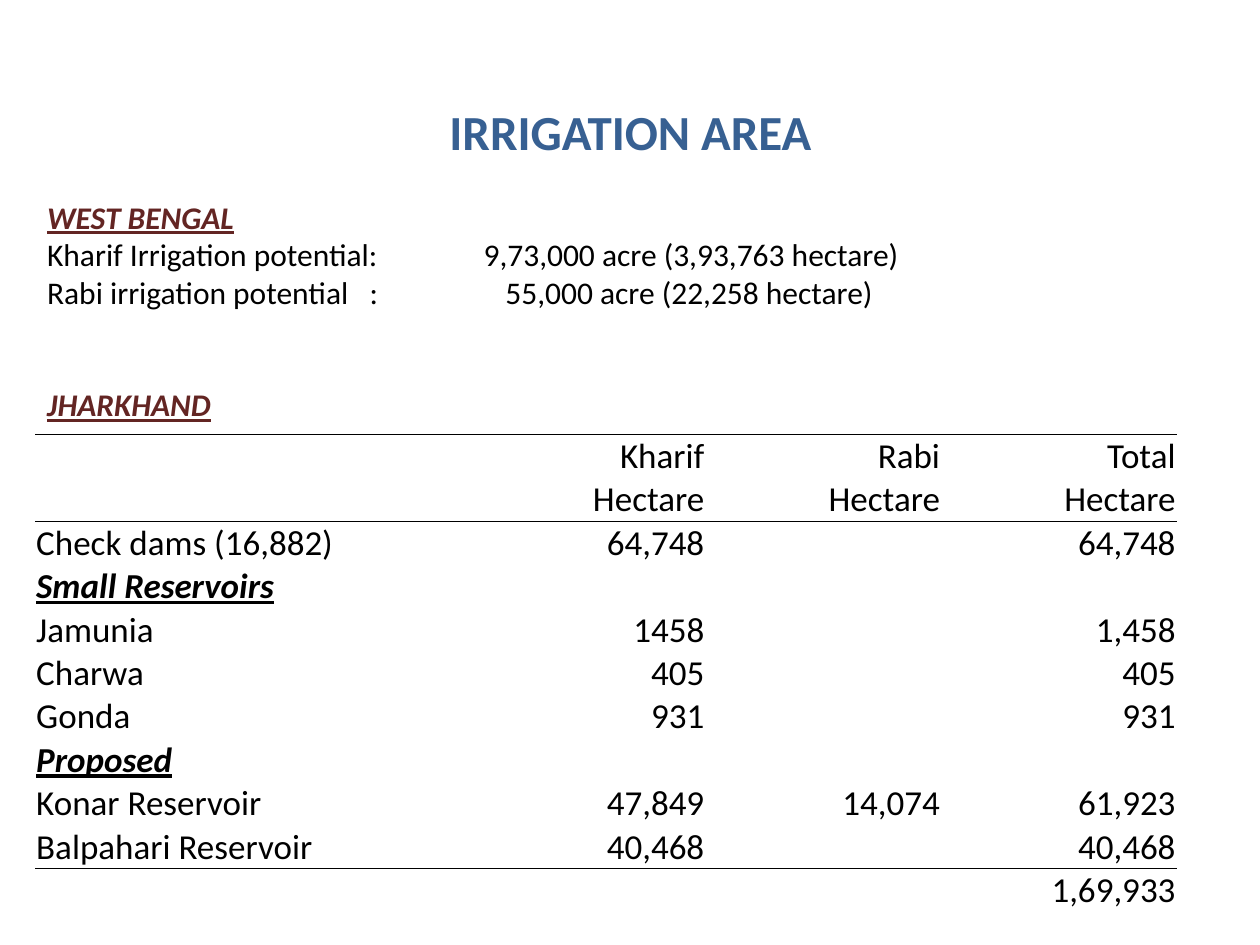
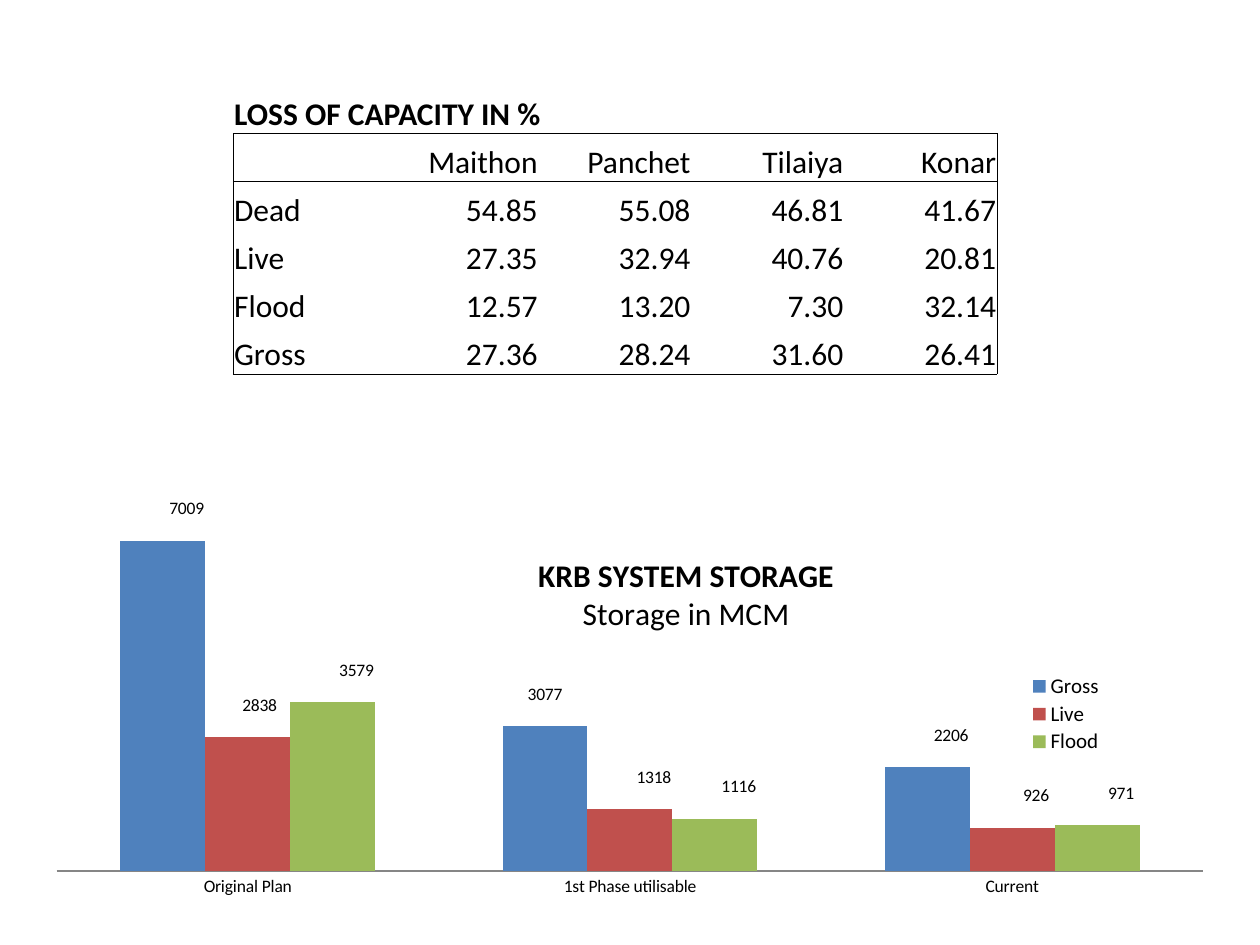
"""Build two slides on irrigation area and reservoir capacity."""
from lxml.etree import SubElement
from pptx import Presentation as Deck
from pptx.chart.data import CategoryChartData as Data
from pptx.dml.color import RGBColor as Rgb
from pptx.enum.chart import XL_CHART_TYPE as Kind, XL_LEGEND_POSITION as Side
from pptx.enum.chart import XL_LABEL_POSITION as Spot, XL_TICK_LABEL_POSITION as Tick
from pptx.enum.chart import XL_TICK_MARK as Mark
from pptx.enum.text import MSO_ANCHOR as Anchor, MSO_AUTO_SIZE as Fit, PP_ALIGN as Align
from pptx.oxml import parse_xml
from pptx.oxml.ns import qn
from pptx.util import Cm, Pt

INK, BLUE, WINE, GREY = "000000", "376092", "632523", "868686"
BASE = {"name": "Calibri", "bold": False, "italic": False, "underline": False}
HEAD = {"bold": True, "italic": True, "underline": True}
PLAIN = "{2D5ABB26-0587-4C30-8999-92F81FD0307C}"
CNS = "http://schemas.openxmlformats.org/drawingml/2006/chart"

TITLE = "IRRIGATION AREA"
NOTES = [
    {"text": "WEST BENGAL", "head": True},
    {"text": "Kharif Irrigation potential:\t9,73,000 acre (3,93,763 hectare)", "tabs": [8.8]},
    {"text": "Rabi irrigation potential\t:\t55,000 acre (22,258 hectare)", "tabs": [6.5, 9.24]},
    {"text": "JHARKHAND", "head": True, "gap": 42.5},
]
AREA = {
    "box": (0.71, 8.76), "cols": [8.76, 4.75, 4.75, 4.75], "high": 0.87, "size": 20,
    "rules": {-1, 1, 9}, "frame": False,
    "heads": {"Small Reservoirs": HEAD, "Proposed": HEAD},
    "rows": [
        ("", "Kharif", "Rabi", "Total"),
        ("", "Hectare", "Hectare", "Hectare"),
        ("Check dams (16,882)", "64,748", "", "64,748"),
        ("Small Reservoirs", "", "", ""),
        ("Jamunia", "1458", "", "1,458"),
        ("Charwa", "405", "", "405"),
        ("Gonda", "931", "", "931"),
        ("Proposed", "", "", ""),
        ("Konar Reservoir", "47,849", "14,074", "61,923"),
        ("Balpahari Reservoir", "40,468", "", "40,468"),
        ("", "", "", "1,69,933"),
    ],
}
LOSS = {
    "box": (4.7, 1.72), "cols": [3.08] * 5, "high": 0.97, "size": 18,
    "rules": {0, 1, 5}, "frame": True,
    "heads": {"LOSS OF CAPACITY IN %": {"bold": True}},
    "rows": [
        ("LOSS OF CAPACITY IN %", "", "", "", ""),
        ("", "Maithon", "Panchet", "Tilaiya", "Konar"),
        ("Dead", "54.85", "55.08", "46.81", "41.67"),
        ("Live", "27.35", "32.94", "40.76", "20.81"),
        ("Flood", "12.57", "13.20", "7.30", "32.14"),
        ("Gross", "27.36", "28.24", "31.60", "26.41"),
    ],
}
STAGES = ["Original Plan", "1st Phase utilisable", "Current"]
STORE = [
    ("Gross", "4F81BD", (7009, 3077, 2206), (0.02, 0, 0.02)),
    ("Live", "C0504D", (2838, 1318, 926), (0.01, 0.02, 0.02)),
    ("Flood", "9BBB59", (3579, 1116, 971), (0.02, 0.02, 0.02)),
]
LIFT = -0.03
CAPTION = [("KRB SYSTEM STORAGE", True), ("Storage in MCM", False)]


def hue(code):
    """Turn a hex string into a colour."""
    return Rgb.from_string(code)


def style(font, size, code=INK, **more):
    """Set a font from the base format and any changes."""
    for key, val in {**BASE, "size": Pt(size), **more}.items():
        setattr(font, key, val)
    font.color.rgb = hue(code)


def place(shape, *box):
    """Move a text shape and return its text frame."""
    shape.left, shape.top, shape.width, shape.height = map(Cm, box)
    frame = shape.text_frame
    frame.word_wrap, frame.auto_size = True, Fit.NONE
    frame.vertical_anchor = Anchor.TOP
    return frame


def write(para, text, size, code=INK, **more):
    """Add one styled run to a paragraph."""
    run = para.add_run()
    run.text = text
    style(run.font, size, code, **more)


def lines(frame, count):
    """Return the given number of paragraphs of a frame."""
    return [frame.add_paragraph() if i else frame.paragraphs[0] for i in range(count)]


def jot(para, note):
    """Write one note with its spacing and tab stops."""
    head = note.get("head")
    write(para, note["text"], 18, WINE if head else INK, **(HEAD if head else {}))
    para.space_before = Pt(note.get("gap", 0))
    if "tabs" in note:
        stops = SubElement(para._p.get_or_add_pPr(), qn("a:tabLst"))
        for pos in note["tabs"]:
            SubElement(stops, qn("a:tab"), pos=str(Cm(pos)), algn="l")


def rule(cell, sides):
    """Draw or clear the line on each side of a cell."""
    props = cell._tc.get_or_add_tcPr()
    for spot, (side, drawn) in enumerate(sides.items()):
        line = props.makeelement(qn(f"a:ln{side}"), {"w": str(Pt(0.5))})
        if drawn:
            SubElement(SubElement(line, qn("a:solidFill")), qn("a:srgbClr"), val=INK)
        else:
            SubElement(line, qn("a:noFill"))
        props.insert(spot, line)


def grid(slide, plan):
    """Add a table with ruled rows and an optional frame."""
    rows, cols, rules = plan["rows"], plan["cols"], plan["rules"]
    size = (sum(cols), plan["high"] * len(rows))
    table = slide.shapes.add_table(len(rows), len(cols), *map(Cm, plan["box"] + size)).table
    table.first_row = table.horz_banding = False
    table._tbl.tblPr.find(qn("a:tableStyleId")).text = PLAIN
    for col, wide in zip(table.columns, cols):
        col.width = Cm(wide)
    for r, row in enumerate(rows):
        table.rows[r].height = Cm(plan["high"])
        for c, text in enumerate(row):
            cell = table.cell(r, c)
            cell.fill.background()
            cell.vertical_anchor = Anchor.BOTTOM
            cell.margin_left = cell.margin_right = Cm(0.02)
            cell.margin_top, cell.margin_bottom = Cm(0.01), 0
            if text:
                para = cell.text_frame.paragraphs[0]
                para.alignment = Align.RIGHT if c else Align.LEFT
                write(para, text, plan["size"], **plan["heads"].get(text, {}))
            edge = plan["frame"] and r > 0
            rule(cell, {"L": edge and c == 0, "R": edge and c == len(cols) - 1,
                        "T": r - 1 in rules, "B": r in rules})
    return table


def pin(part, spot, **dims):
    """Give a chart part a manual layout."""
    for old in part.findall(qn("c:layout")):
        part.remove(old)
    layout = parse_xml(f'<c:layout xmlns:c="{CNS}"><c:manualLayout/></c:layout>')
    for key, val in dims.items():
        SubElement(layout[0], qn(f"c:{key}"), val=str(val))
    part.insert(spot, layout)


def bars(slide):
    """Add the storage column chart."""
    data = Data()
    data.categories = STAGES
    for name, _, vals, _ in STORE:
        data.add_series(name, vals)
    box = map(Cm, (0.66, 6.73, 24.08, 11.53))
    chart = slide.shapes.add_chart(Kind.COLUMN_CLUSTERED, *box, data).chart
    style(chart.font, 10)
    plot = chart.plots[0]
    plot.gap_width, plot.overlap, plot.vary_by_categories = 150, 0, False
    for ser, (_, code, vals, moves) in zip(plot.series, STORE):
        ser.format.fill.solid()
        ser.format.fill.fore_color.rgb = hue(code)
        ser.data_labels.show_value = True
        for i in range(len(vals)):
            ser.points[i].data_label.position = Spot.OUTSIDE_END
        for label, move in zip(ser._element.xpath(".//c:dLbl"), moves):
            pin(label, 1, x=move, y=LIFT)
        for lead in ser._element.xpath(".//c:showLeaderLines"):
            lead.set("val", "0")

    axis = chart.category_axis
    axis.major_tick_mark, axis.tick_label_position = Mark.NONE, Tick.NEXT_TO_AXIS
    axis.format.line.color.rgb = hue(GREY)
    axis.format.line.width = Pt(1)
    for gap in axis._element.xpath("c:lblOffset"):
        gap.set("val", "0")
    scale = chart.value_axis
    scale.minimum_scale, scale.maximum_scale = 0, 8000
    scale.has_major_gridlines = scale.visible = False

    title = chart.chart_title
    for para, (text, bold) in zip(lines(title.text_frame, len(CAPTION)), CAPTION):
        write(para, text, 18, bold=bold)
    title.include_in_layout = False
    chart.has_legend = True
    key = chart.legend
    key.position, key.include_in_layout = Side.TOP, False
    style(key.font, 12)

    edge = {"xMode": "edge", "yMode": "edge"}
    area = chart._chartSpace.xpath("c:chart/c:plotArea")[0]
    pin(area, 0, layoutTarget="inner", **edge, x=0.02, y=0.28, w=0.96, h=0.66)
    pin(title._element, 1, **edge, x=0.42, y=0.38)
    pin(key._element, 1, **edge, x=0.82, y=0.59, w=0.09, h=0.15)


def main():
    """Build and save the deck."""
    deck = Deck()
    deck.slide_width, deck.slide_height = Cm(25.4), Cm(19.05)

    slide = deck.slides.add_slide(deck.slide_layouts[5])
    para = place(slide.shapes.title, 0.71, 1.91, 24, 1.5).paragraphs[0]
    para.alignment = Align.CENTER
    write(para, TITLE, 28, BLUE, bold=True)
    box = (0.7, 3.86, 24, 4.88)
    frame = place(slide.shapes.add_textbox(*map(Cm, box)), *box)
    for para, note in zip(lines(frame, len(NOTES)), NOTES):
        jot(para, note)
    grid(slide, AREA)

    slide = deck.slides.add_slide(deck.slide_layouts[6])
    bars(slide)
    table = grid(slide, LOSS)
    table.cell(0, 0).merge(table.cell(0, 2))
    deck.save("out.pptx")


if __name__ == "__main__":
    main()
